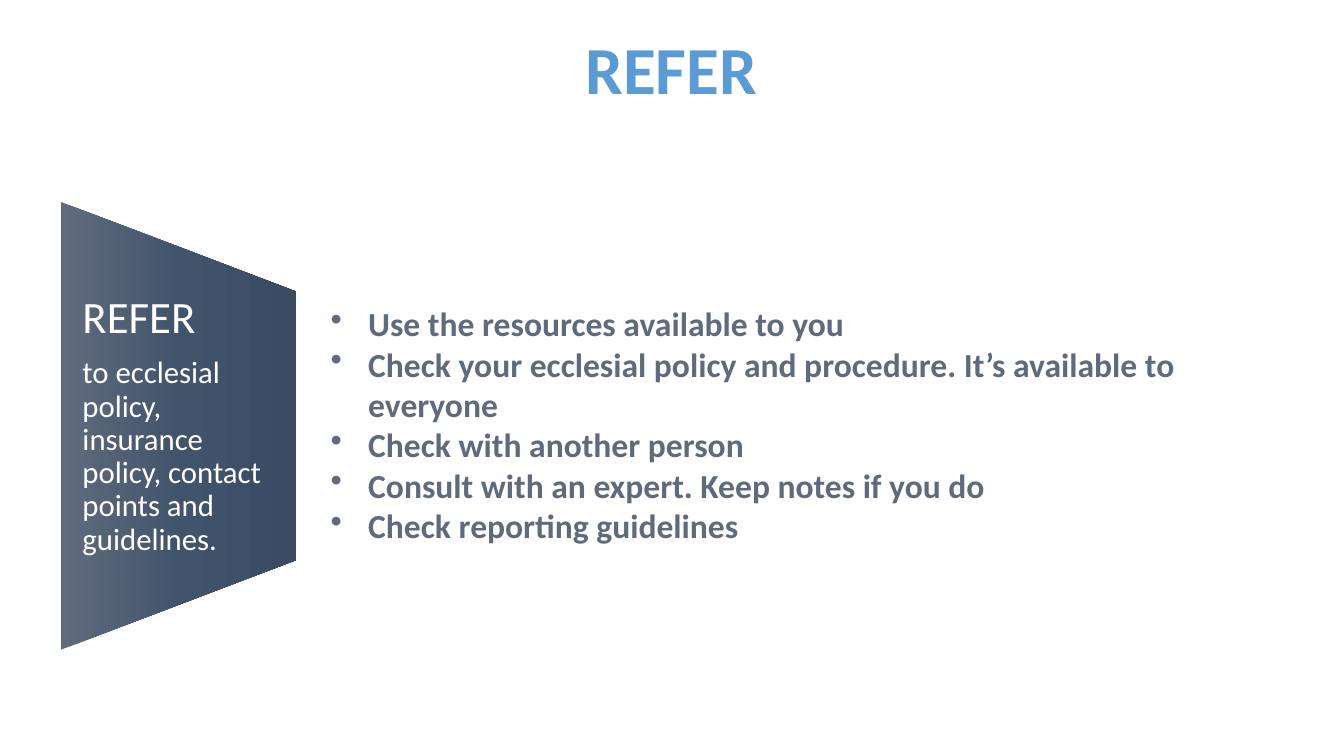
from dataclasses import dataclass
from copy import deepcopy
from lxml.etree import SubElement
from pptx import Presentation
from pptx.dml.color import RGBColor as Color
from pptx.enum.shapes import MSO_SHAPE as Form
from pptx.enum.text import MSO_ANCHOR as Anchor, MSO_AUTO_SIZE as Fit, PP_ALIGN as Align
from pptx.oxml.ns import qn
from pptx.util import Cm, Pt


@dataclass(frozen=True)
class Theme:
    """Colours, font and type sizes of the slide."""
    font: str = "Calibri"
    blue: str = "5B9BD5"
    slate: str = "5F6B7C"
    white: str = "FFFFFF"
    fade: tuple = ((0, "606B7D"), (0.5, "42546C"), (1, "394A62"))
    title: int = 48
    head: int = 32
    body: int = 22
    item: int = 24


class Page:
    """Draws the elements of one slide in one theme."""

    def __init__(self, deck, theme):
        self.theme = theme
        self.slide = deck.slides.add_slide(deck.slide_layouts[6])

    def frame(self, box, wrap=True, fit=Fit.SHAPE_TO_FIT_TEXT):
        """Add a text box and return its frame."""
        frame = self.slide.shapes.add_textbox(*map(Cm, box)).text_frame
        frame.word_wrap = wrap
        frame.auto_size = fit
        return frame

    def line(self, frame, text, size, tint, bold=False):
        """Fill the first empty paragraph or add one."""
        para = frame.paragraphs[0] if not frame.text else frame.add_paragraph()
        para.text = text
        font = para.font
        font.name, font.size, font.bold = self.theme.font, Pt(size), bold
        font.color.rgb = Color.from_string(tint)
        return para

    def title(self, text, box):
        """Add the centred heading."""
        frame = self.frame(box, wrap=False)
        para = self.line(frame, text, self.theme.title, self.theme.blue, True)
        para.alignment = Align.CENTER
        para.line_spacing, para.space_after = 1.07, Pt(8)

    def panel(self, box):
        """Add the tapered panel with its gradient."""
        shape = self.slide.shapes.add_shape(Form.FLOWCHART_MANUAL_OPERATION, *map(Cm, box))
        shape.rotation = 270
        shape.shadow.inherit = False
        shape.line.fill.background()
        fill = shape.fill
        fill.gradient()
        fill.gradient_angle = 270
        last = shape._element.spPr.findall(".//" + qn("a:gs"))[-1]
        last.addnext(deepcopy(last))
        for stop, (place, tint) in zip(fill.gradient_stops, self.theme.fade):
            stop.position = place
            stop.color.rgb = Color.from_string(tint)

    def label(self, head, body, box):
        """Add the panel's heading and text."""
        frame = self.frame(box, fit=Fit.NONE)
        frame.vertical_anchor = Anchor.MIDDLE
        frame.margin_left = frame.margin_right = Cm(0.56)
        frame.margin_top = frame.margin_bottom = 0
        for text, size in ((head, self.theme.head), (body, self.theme.body)):
            para = self.line(frame, text, size, self.theme.white)
            para.line_spacing, para.space_after = 0.9, Pt(10)

    def points(self, items, box):
        """Add the bulleted list."""
        frame = self.frame(box)
        for item in items:
            para = self.line(frame, item, self.theme.item, self.theme.slate, True)
            props = para._p.get_or_add_pPr()
            props.set("marL", str(Cm(0.95)))
            props.set("indent", str(-Cm(0.95)))
            mark = SubElement(props, qn("a:buChar"), char="•")
            props.find(qn("a:defRPr")).addprevious(mark)


def main():
    """Build and save the slide."""
    deck = Presentation()
    deck.slide_width, deck.slide_height = Cm(33.87), Cm(19.05)
    page = Page(deck, Theme())
    page.title("REFER", (14.48, 0.43, 4.88, 2.36))
    page.panel((-1.14, 7.77, 11.28, 5.92))
    page.label(
        "REFER",
        "to ecclesial policy, insurance policy, contact points and guidelines.",
        (1.52, 7.34, 5.92, 6.78),
    )
    page.points(
        (
            "Use the resources available to you",
            "Check your ecclesial policy and procedure. It’s available to everyone",
            "Check with another person",
            "Consult with an expert. Keep notes if you do",
            "Check reporting guidelines",
        ),
        (8.08, 7.52, 23.98, 6.4),
    )
    deck.save("out.pptx")


if __name__ == "__main__":
    main()
